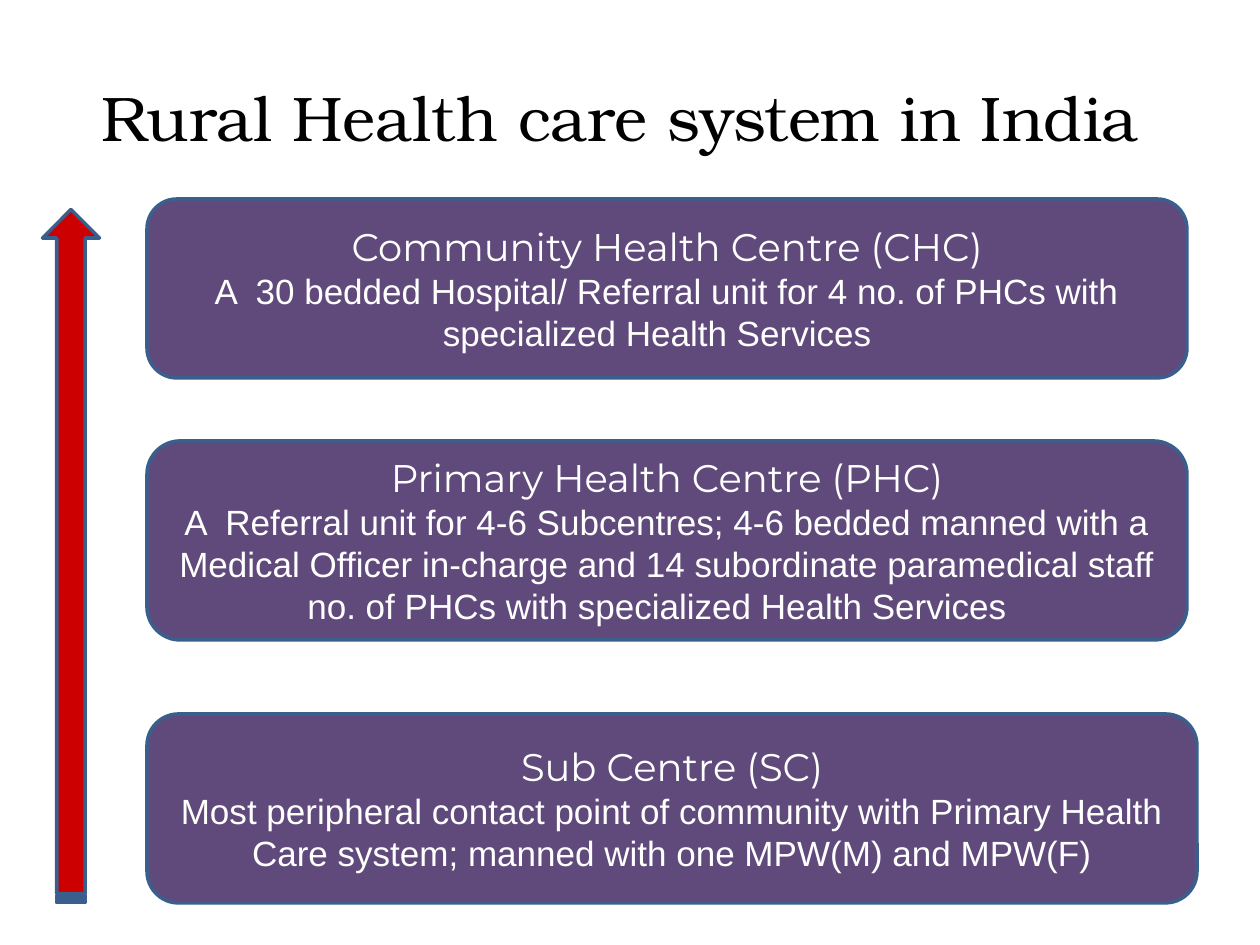
from pptx import Presentation
from pptx.dml.color import RGBColor
from pptx.enum.shapes import MSO_SHAPE
from pptx.enum.text import MSO_ANCHOR, PP_ALIGN
from pptx.util import Pt

ROUND_RECT = MSO_SHAPE.ROUNDED_RECTANGLE
STRIPED_ARROW = MSO_SHAPE.STRIPED_RIGHT_ARROW
CENTER = PP_ALIGN.CENTER
MIDDLE = MSO_ANCHOR.MIDDLE

# Content
TITLE = "Rural Health care system in India "
# top, width, height, heading, description
LEVELS = [
    (199, 1040, 179, "Community Health Centre (CHC)",
     "A  30 bedded Hospital/ Referral unit for 4 no. of PHCs with "
     "specialized Health Services  "),
    (441, 1040, 199, "Primary Health Centre (PHC)",
     "A  Referral unit for 4-6 Subcentres; 4-6 bedded manned with a "
     "Medical Officer in-charge and 14 subordinate paramedical staff "
     "no. of PHCs with specialized Health Services  "),
    (714, 1050, 189, "Sub Centre (SC)",
     "Most peripheral contact point of community with Primary Health "
     "Care system; manned with one MPW(M) and MPW(F)"),
]
LEVEL_LEFT = 147
ARROW_CENTER, ARROW_LENGTH, ARROW_THICKNESS = (71, 556), 693, 57

PURPLE, BLUE, RED = "604A7B", "3A5F8C", "CC0000"
BLACK, WHITE = "000000", "FFFFFF"
SCALE = 914400 / 126


def px(n):
    return round(n * SCALE)


def rgb(color):
    return RGBColor.from_string(color)


def write(s, lines):
    """Fill a shape with centred paragraphs of (text, font, size, color)."""
    tf = s.text_frame
    tf.word_wrap = True
    tf.vertical_anchor = MIDDLE
    for i, (text, font, size, color) in enumerate(lines):
        p = tf.paragraphs[0] if i == 0 else tf.add_paragraph()
        p.text = text
        p.alignment = CENTER
        p.font.name = font
        p.font.size = Pt(size)
        p.font.color.rgb = rgb(color)


def add_shape(kind, left, top, width, height, fill):
    s = slide.shapes.add_shape(kind, px(left), px(top), px(width), px(height))
    s.shadow.inherit = False
    s.fill.solid()
    s.fill.fore_color.rgb = rgb(fill)
    s.line.color.rgb = rgb(BLUE)
    s.line.width = Pt(2)
    return s


prs = Presentation()
prs.slide_width, prs.slide_height = px(1260), px(945)
slide = prs.slides.add_slide(prs.slide_layouts[6])

# Title
title = slide.shapes.add_textbox(px(63), px(38), px(1134), px(157))
write(title, [(TITLE, "TeX Gyre Bonum", 36, BLACK)])

# Levels of care
for top, width, height, heading, description in LEVELS:
    box = add_shape(ROUND_RECT, LEVEL_LEFT, top, width, height, PURPLE)
    write(box, [(heading, "Montserrat", 22, WHITE),
                (description, "Arial", 20, WHITE)])

# Upward referral arrow
cx, cy = ARROW_CENTER
arrow = add_shape(STRIPED_ARROW, cx - ARROW_LENGTH / 2, cy - ARROW_THICKNESS / 2,
                  ARROW_LENGTH, ARROW_THICKNESS, RED)
arrow.rotation = 270

prs.save("out.pptx")
